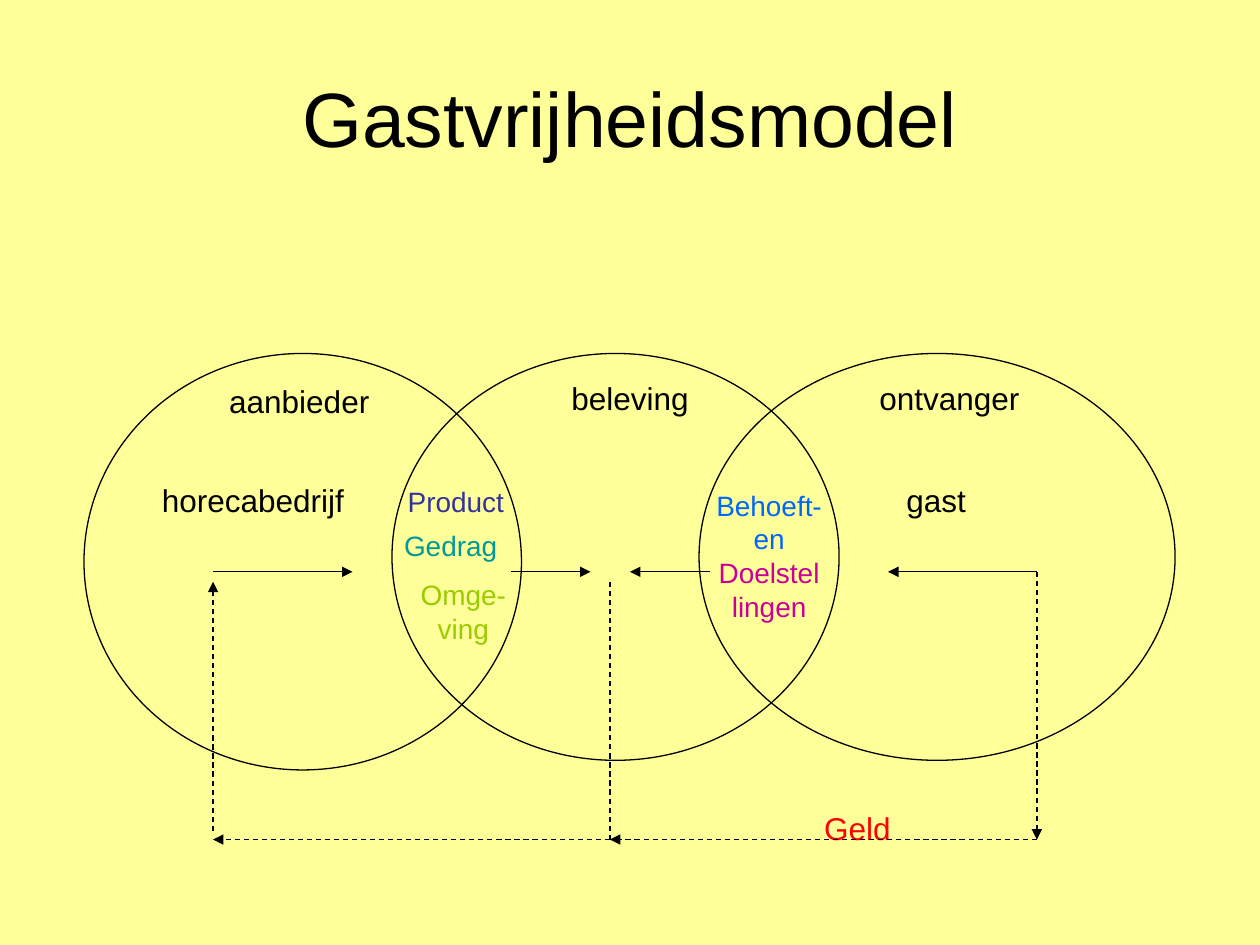
from dataclasses import dataclass

from lxml.etree import SubElement
from pptx import Presentation
from pptx.dml.color import RGBColor
from pptx.enum.dml import MSO_LINE
from pptx.enum.shapes import MSO_CONNECTOR, MSO_SHAPE
from pptx.enum.text import MSO_ANCHOR, MSO_AUTO_SIZE, PP_ALIGN
from pptx.oxml.ns import qn
from pptx.util import Pt


@dataclass(frozen=True)
class Theme:
    font: str = "Arial"
    background: str = "FFFF99"
    ink: str = "000000"
    product: str = "333399"
    behaviour: str = "009999"
    surroundings: str = "99CC00"
    needs: str = "0066FF"
    goals: str = "CC0099"
    money: str = "FF0000"
    title_size: int = 44
    label_size: int = 18
    overlap_size: int = 16
    line_width: float = 0.75


THEME = Theme()


def add_label(slide, box, lines, size, wrap=True):
    """Place centred text; lines is a list of (text, colour) paragraphs."""
    shape = slide.shapes.add_textbox(*map(Pt, box))
    text_frame = shape.text_frame
    text_frame.word_wrap = wrap
    text_frame.auto_size = MSO_AUTO_SIZE.SHAPE_TO_FIT_TEXT
    text_frame.text = "\n".join(text for text, _ in lines)
    for paragraph, (_, colour) in zip(text_frame.paragraphs, lines):
        paragraph.alignment = PP_ALIGN.CENTER
        font = paragraph.runs[0].font
        font.name = THEME.font
        font.size = Pt(size)
        font.color.rgb = RGBColor.from_string(colour)
    return shape


def style_line(line):
    line.color.rgb = RGBColor.from_string(THEME.ink)
    line.width = Pt(THEME.line_width)


def add_circle(slide, box):
    shape = slide.shapes.add_shape(MSO_SHAPE.OVAL, *map(Pt, box))
    shape.shadow.inherit = False
    shape.fill.background()
    style_line(shape.line)


def add_line(slide, start, end, dashed=False, arrow=True):
    connector = slide.shapes.add_connector(
        MSO_CONNECTOR.STRAIGHT, *map(Pt, (*start, *end)))
    style_line(connector.line)
    if dashed:
        connector.line.dash_style = MSO_LINE.DASH
    properties = connector._element.spPr
    if arrow:
        SubElement(properties.find(qn("a:ln")), qn("a:tailEnd"), type="triangle")
    SubElement(properties, qn("a:effectLst"))


def add_title(slide, box):
    shape = add_label(slide, box, [("Gastvrijheidsmodel", THEME.ink)],
                      THEME.title_size)
    shape.text_frame.auto_size = MSO_AUTO_SIZE.NONE
    shape.text_frame.vertical_anchor = MSO_ANCHOR.MIDDLE


def add_circles(slide, box):
    left, top, _, _ = box

    # Provider, receiver and the experience between them
    for x, width, height in ((0, 250, 238), (351.5, 272, 232.5),
                             (176, 255.5, 232.5)):
        add_circle(slide, (left + x, top, width, height))

    # Names of the roles
    for text, colour, x, y, width, wrap in (
        ("aanbieder", THEME.ink, 62.5, 12.5, 121, True),
        ("beleving", THEME.ink, 252.5, 11, 119, True),
        ("ontvanger", THEME.ink, 420, 11, 149, True),
        ("horecabedrijf", THEME.ink, 35, 69.5, 123, False),
        ("gast", THEME.ink, 459, 69.5, 56, False),
        ("Geld", THEME.money, 414, 256.5, 56, False),
    ):
        add_label(slide, (left + x, top + y, width, 29), [(text, colour)],
                  THEME.label_size, wrap)

    # Words in the overlaps
    for x, y, width, height, lines in (
        (164, 71.5, 97, 27, [("Product", THEME.product)]),
        (170, 96.5, 79, 27, [("Gedrag", THEME.behaviour)]),
        (172.5, 124.5, 88.5, 46, [("Omge-", THEME.surroundings),
                                  ("ving", THEME.surroundings)]),
        (354, 73.5, 75, 84, [("Behoeft-", THEME.needs), ("en", THEME.needs),
                             ("Doelstellingen", THEME.goals)]),
    ):
        add_label(slide, (left + x, top + y, width, height), lines,
                  THEME.overlap_size)


def add_flows(slide, box):
    left, top, _, height = box
    provider, middle, guest = left + 73.75, left + 300.5, left + 544.5
    upper, lower = top + 124.75, top + height
    dashed_top = upper + 5.75

    # Arrows towards the experience
    for start, end in ((provider, left + 153.5), (left + 244.25, left + 289.5),
                       (left + 357.5, left + 312), (guest, left + 459.5)):
        add_line(slide, (start, upper), (end, upper))

    # Money flowing back to the provider
    add_line(slide, (middle, dashed_top), (middle, lower), dashed=True, arrow=False)
    for start, end in (
        ((guest, upper), (guest, lower)),
        ((guest, lower), (middle, lower)),
        ((middle, lower), (provider, lower)),
        ((provider, lower - 5), (provider, dashed_top)),
    ):
        add_line(slide, start, end, dashed=True)


def main():
    presentation = Presentation()
    presentation.slide_width, presentation.slide_height = Pt(720), Pt(540)
    slide = presentation.slides.add_slide(presentation.slide_layouts[6])
    background = slide.background.fill
    background.solid()
    background.fore_color.rgb = RGBColor.from_string(THEME.background)

    model_box = (48, 202, 624, 277.75)
    add_title(slide, (36, 21.5, 648, 90))
    add_circles(slide, model_box)
    add_flows(slide, model_box)
    presentation.save("out.pptx")


if __name__ == "__main__":
    main()
